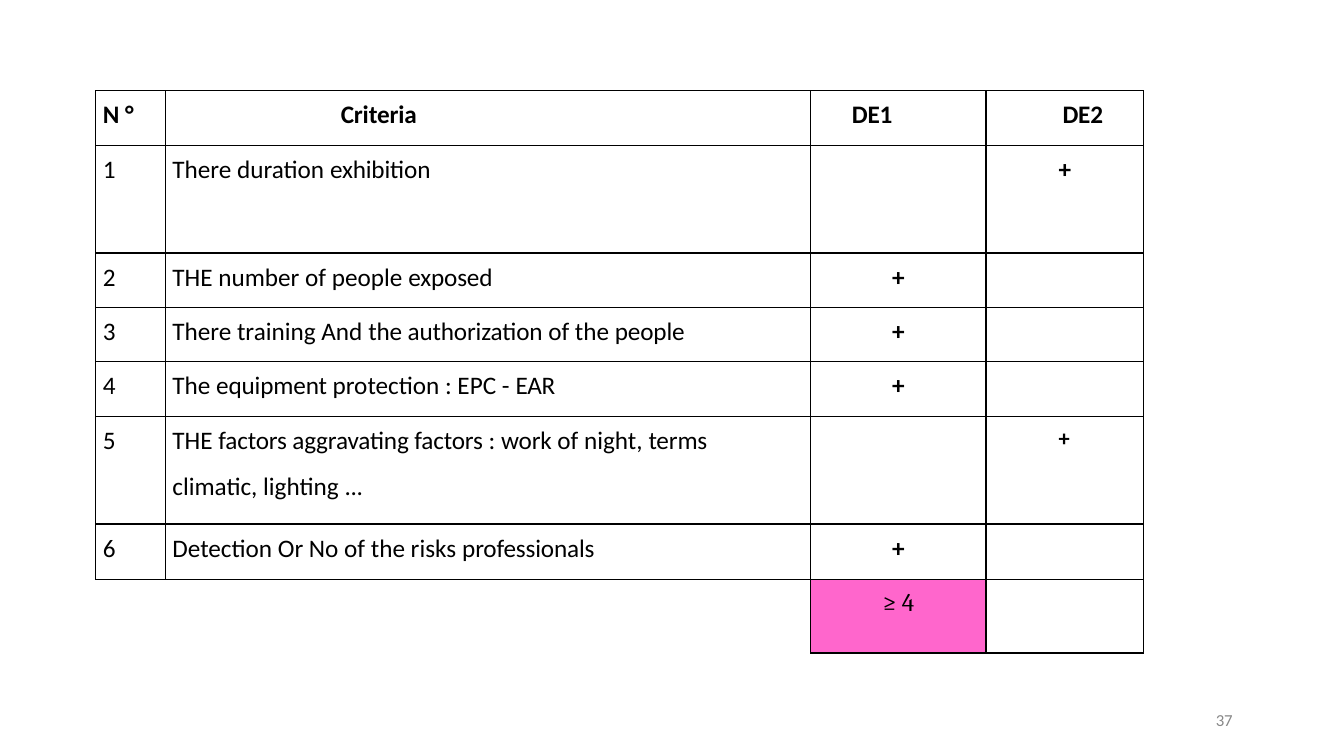
from pptx import Presentation
from pptx.dml.color import RGBColor
from pptx.enum.text import MSO_ANCHOR as Anchor, PP_ALIGN as Align
from pptx.oxml.ns import qn
from pptx.util import Inches, Pt
from lxml.etree import SubElement

BLACK = RGBColor(0x00, 0x00, 0x00)
GREY = RGBColor(0x88, 0x88, 0x88)
PINK = RGBColor(0xFF, 0x66, 0xCC)

COLUMN_WIDTHS = [0.69, 6.4, 1.74, 1.56]
ROW_HEIGHTS = [0.54, 1.07, 0.54, 0.54, 0.54, 1.07, 0.55, 0.73]
TEXT_INDENT = 0.07

# Header: runs of (text, letter spacing) and the left indent
HEADINGS = [
    ([("N ", 0), ("°", -0.5)], TEXT_INDENT),
    ([("Criteria", -0.1)], 1.74),
    ([("DE1", -0.2)], 0.41),
    ([("DE2", -0.2)], 0.76),
]

# Criteria: lines of runs, and the column that holds the plus
CRITERIA = [
    ([[("There duration ", 0), ("exhibition", -0.1)]], 3),
    ([[("THE number of people ", 0), ("exposed", -0.1)]], 2),
    ([[("There training And ", 0), ("the authorization ", -0.1),
       ("of the ", 0), ("people", -0.1)]], 2),
    ([[("The ", 0), ("equipment ", -0.1), ("protection : EPC - ", 0),
       ("EAR", -0.2)]], 2),
    ([[("THE ", 0), ("factors aggravating factors ", -0.1), (": ", 0),
       ("work ", -0.1), ("of night, ", 0), ("terms", -0.1)],
      [("climatic, lighting ", 0), ("...", -0.2)]], 3),
    ([[("Detection Or No of the risks ", 0), ("professionals", -0.1)]], 2),
]


def add_runs(paragraph, runs, size=18, bold=False, color=BLACK, font="Calibri"):
    for text, spacing in runs:
        run = paragraph.add_run()
        run.text = text
        run.font.name = font
        run.font.size = Pt(size)
        run.font.bold = bold
        run.font.color.rgb = color
        if spacing:
            run.font._element.set("spc", str(round(spacing * 100)))


def set_indent(paragraph, indent):
    properties = paragraph._p.get_or_add_pPr()
    properties.set("marL", str(Inches(indent)))
    properties.set("indent", "0")


def write_cell(cell, lines, indent=None, **style):
    """Fill a cell with lines of runs, centred when there is no indent."""
    frame = cell.text_frame
    for index, runs in enumerate(lines):
        paragraph = frame.add_paragraph() if index else frame.paragraphs[0]
        if indent is None:
            paragraph.alignment = Align.CENTER
        else:
            set_indent(paragraph, indent)
        if index:
            paragraph.space_before = Pt(10.8)
        add_runs(paragraph, runs, **style)


def set_borders(cell, visible="LRTB"):
    properties = cell._tc.get_or_add_tcPr()
    for side in "LRTB":
        line = SubElement(properties, qn(f"a:ln{side}"), w=str(Pt(1)))
        if side in visible:
            fill = SubElement(line, qn("a:solidFill"))
            SubElement(fill, qn("a:srgbClr"), val=str(BLACK))
        else:
            SubElement(line, qn("a:noFill"))


def format_cell(cell, visible="LRTB"):
    cell.margin_left = cell.margin_right = cell.margin_bottom = 0
    cell.margin_top = Inches(0.09)
    cell.vertical_anchor = Anchor.TOP
    set_borders(cell, visible)
    cell.fill.background()


def add_criteria_table(slide):
    table = slide.shapes.add_table(
        len(ROW_HEIGHTS), len(COLUMN_WIDTHS), Inches(0.95), Inches(0.9),
        Inches(sum(COLUMN_WIDTHS)), Inches(sum(ROW_HEIGHTS))).table
    table.first_row = table.horz_banding = False
    for column, width in zip(table.columns, COLUMN_WIDTHS):
        column.width = Inches(width)
    for row, height in zip(table.rows, ROW_HEIGHTS):
        row.height = Inches(height)

    # Borders: the empty corner keeps only its top and right edges
    total_row = len(ROW_HEIGHTS) - 1
    corner_edges = {(total_row, 0): "T", (total_row, 1): "TR"}
    for row in range(len(ROW_HEIGHTS)):
        for column in range(len(COLUMN_WIDTHS)):
            format_cell(table.cell(row, column),
                        corner_edges.get((row, column), "LRTB"))
    table.cell(total_row, 0).merge(table.cell(total_row, 1))
    set_corner = table.cell(total_row, 0)._tc.tcPr.find(qn("a:lnR"))
    set_corner.remove(set_corner[0])
    edge_fill = SubElement(set_corner, qn("a:solidFill"))
    SubElement(edge_fill, qn("a:srgbClr"), val=str(BLACK))

    # Header row
    for column, (runs, indent) in enumerate(HEADINGS):
        write_cell(table.cell(0, column), [runs], indent, bold=True)

    # Numbered criteria with their plus
    for number, (lines, plus_column) in enumerate(CRITERIA, start=1):
        write_cell(table.cell(number, 0), [[(str(number), -0.5)]], TEXT_INDENT)
        write_cell(table.cell(number, 1), lines, TEXT_INDENT)
        write_cell(table.cell(number, plus_column), [[("+", -0.5)]],
                   indent=0.72 if plus_column == 3 else None,
                   size=16 if number == 5 else 18, bold=True)

    # Total
    total = table.cell(total_row, 2)
    write_cell(total, [[("≥ ", 0), ("4", -0.5)]], font="Cambria")
    total.fill.solid()
    total.fill.fore_color.rgb = PINK


def add_page_number(slide, number):
    frame = slide.shapes.add_textbox(
        Inches(12.02), Inches(7.07), Inches(0.35), Inches(0.2)).text_frame
    frame.word_wrap = True
    frame.margin_left = frame.margin_right = 0
    frame.margin_top = frame.margin_bottom = 0
    paragraph = frame.paragraphs[0]
    set_indent(paragraph, 0.04)
    paragraph.line_spacing = Pt(12.4)
    add_runs(paragraph, [(number, -0.2)], size=12, color=GREY)


def main():
    deck = Presentation()
    deck.slide_width, deck.slide_height = Inches(13.33), Inches(7.5)
    slide = deck.slides.add_slide(deck.slide_layouts[6])
    add_criteria_table(slide)
    add_page_number(slide, "37")
    deck.save("out.pptx")


if __name__ == "__main__":
    main()
